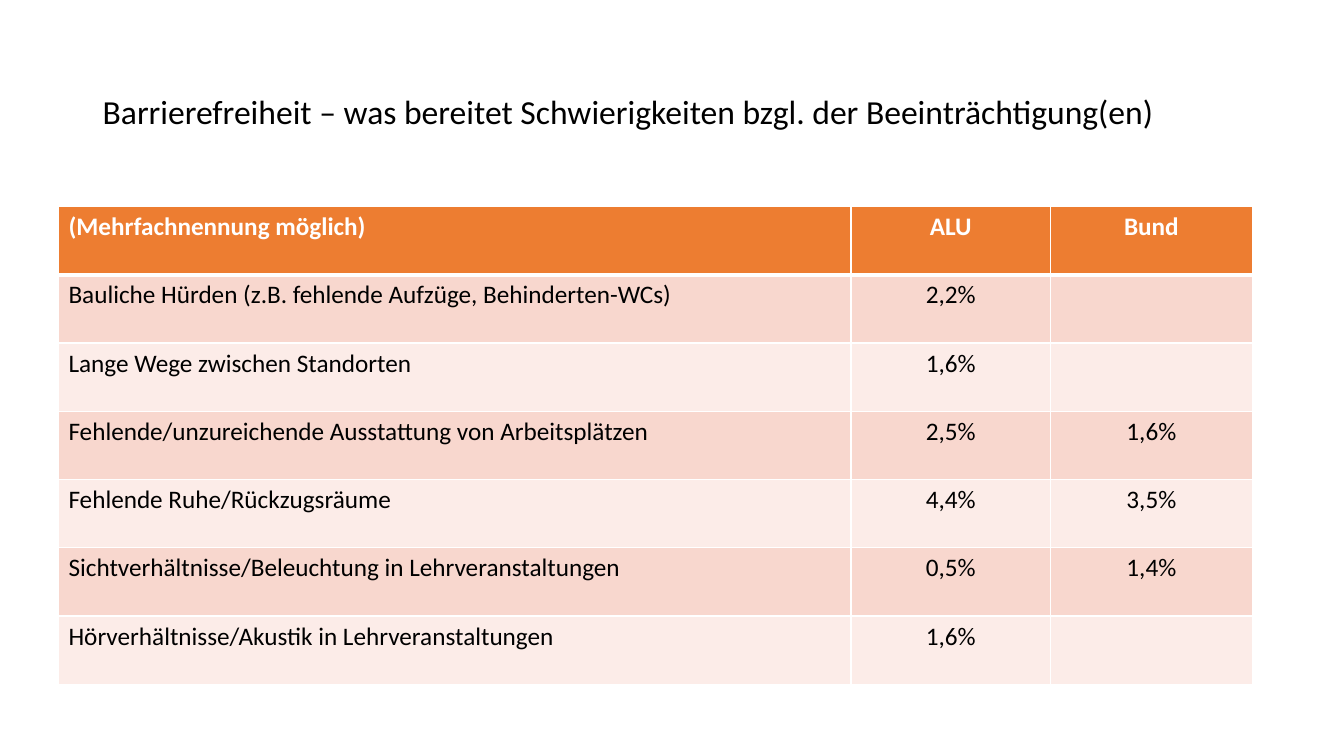
from lxml.etree import SubElement
from pptx import Presentation
from pptx.dml.color import RGBColor
from pptx.enum.text import MSO_ANCHOR, PP_ALIGN
from pptx.oxml.ns import qn
from pptx.util import Inches, Pt

COLORS = {
    "header": "ED7D31",
    "odd_row": "F8D7CE",
    "even_row": "FCECE8",
    "border": "FFFFFF",
    "header_text": "FFFFFF",
    "text": "000000",
}
FONT = "Calibri"
COLUMN_WIDTHS = [7.86, 1.98, 2]
ROW_HEIGHT = 0.677
ROWS = [
    ("(Mehrfachnennung möglich)", "ALU", "Bund"),
    ("Bauliche Hürden (z.B. fehlende Aufzüge, Behinderten-WCs)", "2,2%", ""),
    ("Lange Wege zwischen Standorten", "1,6%", ""),
    ("Fehlende/unzureichende Ausstattung von Arbeitsplätzen", "2,5%", "1,6%"),
    ("Fehlende Ruhe/Rückzugsräume", "4,4%", "3,5%"),
    ("Sichtverhältnisse/Beleuchtung in Lehrveranstaltungen", "0,5%", "1,4%"),
    ("Hörverhältnisse/Akustik in Lehrveranstaltungen", "1,6%", ""),
]


def style_font(font, size, color, bold=False):
    font.name = FONT
    font.size = Pt(size)
    font.bold = bold
    font.color.rgb = RGBColor.from_string(COLORS[color])


def set_borders(cell, widths):
    properties = cell._tc.get_or_add_tcPr()
    for position, (side, width) in enumerate(widths.items()):
        line = properties.makeelement(qn(f"a:ln{side}"), {"w": str(Pt(width))})
        fill = SubElement(line, qn("a:solidFill"))
        SubElement(fill, qn("a:srgbClr"), val=COLORS["border"])
        properties.insert(position, line)  # borders precede the cell fill


presentation = Presentation()
presentation.slide_width = Inches(13.33)
presentation.slide_height = Inches(7.5)
slide = presentation.slides.add_slide(presentation.slide_layouts[6])

# Title
title = slide.shapes.add_textbox(Inches(0.92), Inches(0.4), Inches(11.5), Inches(1.45))
title.text_frame.word_wrap = True
title.text_frame.vertical_anchor = MSO_ANCHOR.MIDDLE
paragraph = title.text_frame.paragraphs[0]
paragraph.text = "Barrierefreiheit – was bereitet Schwierigkeiten bzgl. der Beeinträchtigung(en)"
paragraph.line_spacing = 0.9
style_font(paragraph.font, 24, "text")

# Table grid
table = slide.shapes.add_table(
    len(ROWS), len(COLUMN_WIDTHS), Inches(0.58), Inches(2.05),
    Inches(sum(COLUMN_WIDTHS)), Inches(ROW_HEIGHT * len(ROWS)),
).table
for column, width in zip(table.columns, COLUMN_WIDTHS):
    column.width = Inches(width)

# Header and alternating body rows
for row_index, row in enumerate(ROWS):
    is_header = row_index == 0
    fill_name = "header" if is_header else "odd_row" if row_index % 2 else "even_row"
    borders = {"L": 1, "R": 1, "T": 3 if row_index == 1 else 1, "B": 3 if is_header else 1}
    for column_index, text in enumerate(row):
        cell = table.cell(row_index, column_index)
        cell.fill.solid()
        cell.fill.fore_color.rgb = RGBColor.from_string(COLORS[fill_name])
        set_borders(cell, borders)
        cell.text = text
        paragraph = cell.text_frame.paragraphs[0]
        paragraph.alignment = PP_ALIGN.CENTER if column_index else PP_ALIGN.LEFT
        style_font(paragraph.font, 18, "header_text" if is_header else "text", is_header)

presentation.save("out.pptx")
